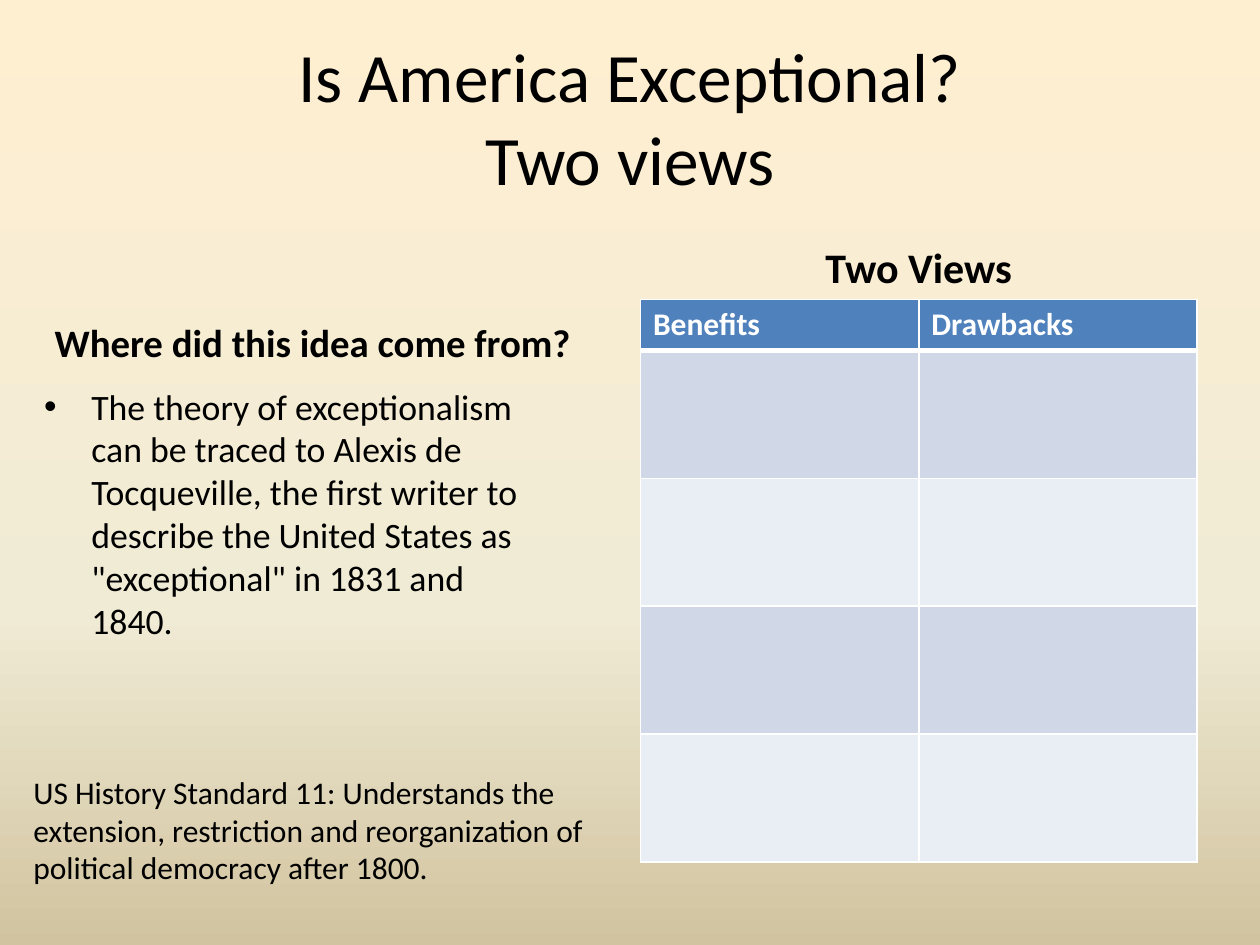
from copy import deepcopy

from lxml import etree
from pptx import Presentation
from pptx.dml.color import RGBColor
from pptx.enum.text import MSO_ANCHOR, MSO_AUTO_SIZE, PP_ALIGN
from pptx.oxml.ns import qn
from pptx.util import Pt

LEFT, CENTER = PP_ALIGN.LEFT, PP_ALIGN.CENTER
TOP, MIDDLE, BOTTOM = MSO_ANCHOR.TOP, MSO_ANCHOR.MIDDLE, MSO_ANCHOR.BOTTOM
NO_FIT = MSO_AUTO_SIZE.NONE

# Content
TITLE = "Is America Exceptional?\vTwo views"
ORIGIN_HEADING = "Where did this idea come from?"
ORIGIN_POINT = (
    "The theory of exceptionalism can be traced to Alexis de Tocqueville, "
    "the first writer to describe the United States as \"exceptional\" "
    "in 1831 and 1840."
)
VIEWS_HEADING = "Two Views"
VIEWS = ["Benefits", "Drawbacks"]
BLANK_ROWS = 4
STANDARD = (
    "US History Standard 11: Understands the extension, restriction and "
    "reorganization of political democracy after 1800."
)

THEME = {
    "font": "Calibri",
    "text": "000000",
    "header_text": "FFFFFF",
    "header_fill": "4F81BD",
    "bands": ["D0D8E8", "E9EDF4"],
    "border": "FFFFFF",
    "background": [(0, "FFEFD1"), (0.65, "F0EBD5"), (1, "D1C39F")],
    "title": 39.6,
    "views": 24,
    "heading": 22.2,
    "bullet": 20.4,
    "small": 18,
}

# Layout: left, top, width, height
TITLE_BOX = (36, 21.6, 648, 90)
ORIGIN_HEADING_BOX = (24, 162, 318, 50.4)
ORIGIN_BOX = (18, 216, 294, 146)
VIEWS_HEADING_BOX = (366, 120, 318, 50.4)
STANDARD_BOX = (12, 438, 342, 72.7)
HEADER_HEIGHT, ROW_HEIGHT = 29.2, 73.1
TABLE_BOX = (366, 171, 318, HEADER_HEIGHT + BLANK_ROWS * ROW_HEIGHT)
BULLET_INDENT = 27


def place(sp, box):
    sp.left, sp.top, sp.width, sp.height = (Pt(v) for v in box)


def write(tf, text, size, color=THEME["text"], bold=False, align=LEFT,
          anchor=TOP, bullet=None):
    tf.word_wrap = True
    tf.text = text
    tf.vertical_anchor = anchor
    p = tf.paragraphs[0]
    p.alignment = align
    p.space_before = Pt(0)
    if bullet:
        pPr = p._p.get_or_add_pPr()
        pPr.set("marL", str(Pt(BULLET_INDENT)))
        pPr.set("indent", str(-Pt(BULLET_INDENT)))
        etree.SubElement(pPr, qn("a:buFont"), typeface="Arial")
        etree.SubElement(pPr, qn("a:buChar"), char=bullet)
    for r in p.runs:
        r.font.name = THEME["font"]
        r.font.size = Pt(size)
        r.font.bold = bold
        r.font.color.rgb = RGBColor.from_string(color)


def fill_cell(cell, color, bottom=1):
    tcPr = cell._tc.get_or_add_tcPr()
    for side, width in (("L", 1), ("R", 1), ("T", 1), ("B", bottom)):
        ln = etree.SubElement(tcPr, qn(f"a:ln{side}"), w=str(Pt(width)))
        solid = etree.SubElement(ln, qn("a:solidFill"))
        etree.SubElement(solid, qn("a:srgbClr"), val=THEME["border"])
    cell.fill.solid()
    cell.fill.fore_color.rgb = RGBColor.from_string(color)


def paint_background(s):
    fill = s.background.fill
    fill.gradient()
    fill.gradient_angle = 270
    stops = s.background._cSld.find(".//" + qn("a:gsLst"))
    stops.append(deepcopy(stops[-1]))
    for stop, (position, color) in zip(fill.gradient_stops, THEME["background"]):
        stop.position = position
        stop.color.rgb = RGBColor.from_string(color)


def add_views_table(s):
    table = s.shapes.add_table(BLANK_ROWS + 1, len(VIEWS),
                               *(Pt(v) for v in TABLE_BOX)).table
    for i, row in enumerate(table.rows):
        row.height = Pt(ROW_HEIGHT if i else HEADER_HEIGHT)
        for cell, view in zip(row.cells, VIEWS):
            if i:
                fill_cell(cell, THEME["bands"][(i - 1) % 2])
            else:
                fill_cell(cell, THEME["header_fill"], bottom=3)
                write(cell.text_frame, view, THEME["small"],
                      color=THEME["header_text"], bold=True)


def main():
    prs = Presentation()
    prs.slide_width, prs.slide_height = Pt(720), Pt(540)
    s = prs.slides.add_slide(prs.slide_layouts.get_by_name("Comparison"))
    paint_background(s)

    # Title and text placeholders, by placeholder index
    parts = {
        0: (TITLE_BOX, TITLE, THEME["title"],
            {"align": CENTER, "anchor": MIDDLE}),
        1: (ORIGIN_HEADING_BOX, ORIGIN_HEADING, THEME["heading"],
            {"bold": True, "anchor": BOTTOM}),
        2: (ORIGIN_BOX, ORIGIN_POINT, THEME["bullet"], {"bullet": "•"}),
        3: (VIEWS_HEADING_BOX, VIEWS_HEADING, THEME["views"],
            {"bold": True, "align": CENTER, "anchor": BOTTOM}),
    }
    for sp in list(s.placeholders):
        idx = sp.placeholder_format.idx
        if idx not in parts:
            sp.element.getparent().remove(sp.element)
            continue
        box, text, size, style = parts[idx]
        place(sp, box)
        sp.text_frame.auto_size = NO_FIT
        write(sp.text_frame, text, size, **style)

    # Table of the two views
    add_views_table(s)

    # Standard reference
    note = s.shapes.add_textbox(*(Pt(v) for v in STANDARD_BOX))
    write(note.text_frame, STANDARD, THEME["small"])

    prs.save("out.pptx")


if __name__ == "__main__":
    main()
